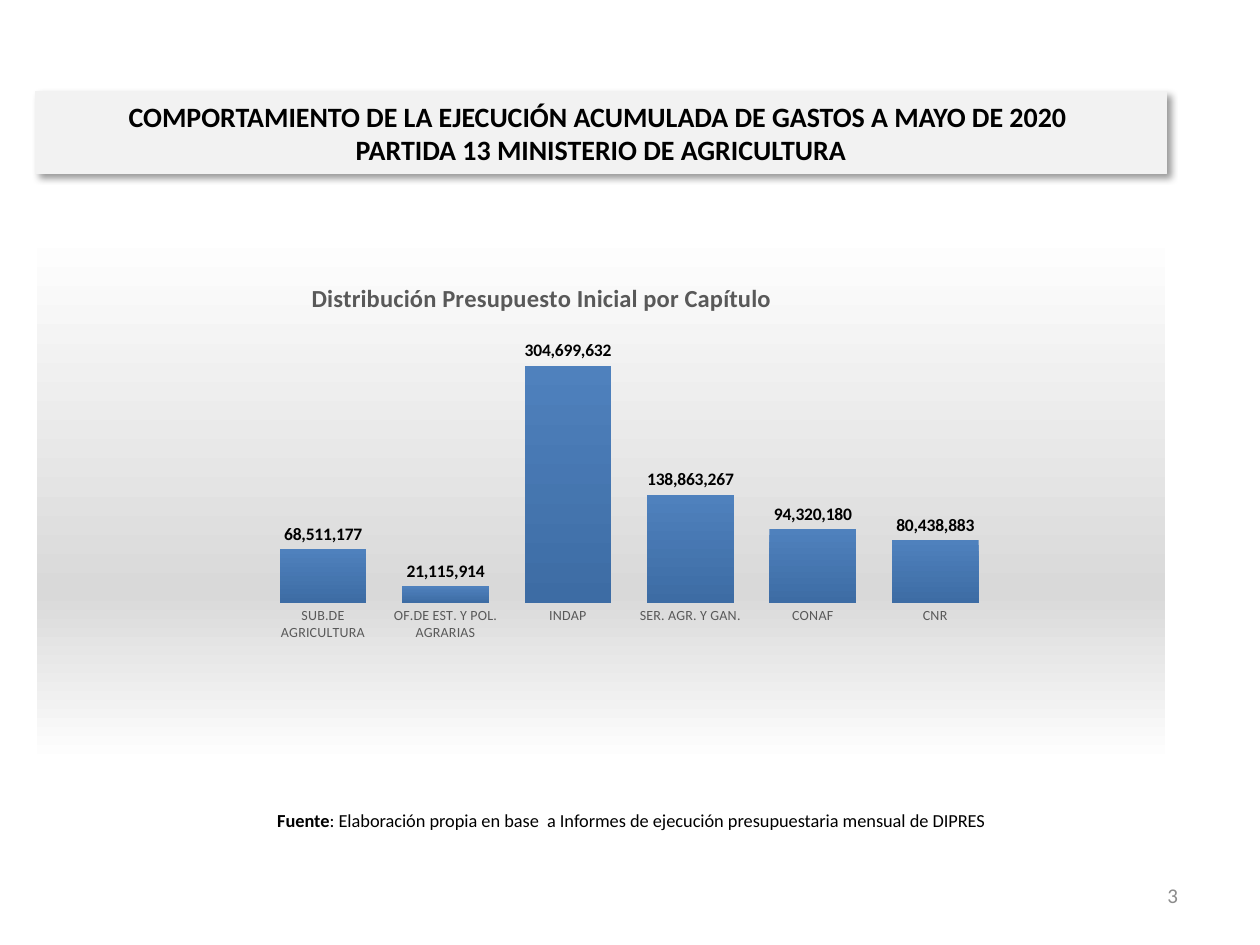
"""Build the slide on the initial budget of the Ministry of Agriculture by chapter."""
from dataclasses import dataclass

from lxml.etree import SubElement
from pptx import Presentation
from pptx.chart.data import CategoryChartData
from pptx.dml.color import RGBColor as Rgb
from pptx.enum.chart import XL_CHART_TYPE as ChartType
from pptx.enum.chart import XL_LABEL_POSITION as LabelPosition
from pptx.enum.chart import XL_TICK_MARK as TickMark
from pptx.enum.shapes import MSO_SHAPE as Preset
from pptx.enum.text import MSO_ANCHOR as Anchor
from pptx.enum.text import PP_ALIGN as Align
from pptx.oxml import parse_xml
from pptx.oxml.ns import nsdecls, qn
from pptx.util import Cm, Pt


@dataclass(frozen=True)
class Theme:
    """Font, colours and type sizes of the slide."""
    font: str = "Calibri"
    ink: str = "000000"
    muted: str = "595959"
    number: str = "8C8C8C"
    band: str = "F2F2F2"
    border: str = "FFFFFF"
    bar: tuple = ("4F81BD", "3D6CA4")
    backdrop: tuple = ((0, "FFFFFF"), (68, "D9D9D9"), (100, "FFFFFF"))
    heading_size: float = 16
    chart_title_size: float = 14
    page_size: float = 12
    source_size: float = 10.5
    label_size: float = 10
    axis_size: float = 8


@dataclass(frozen=True)
class Area:
    """Position and size in centimetres."""
    left: float
    top: float
    width: float
    height: float

    def lengths(self) -> tuple:
        return Cm(self.left), Cm(self.top), Cm(self.width), Cm(self.height)


@dataclass(frozen=True)
class Span:
    """A stretch of text of one weight."""
    text: str
    bold: bool = False


@dataclass(frozen=True)
class Chapter:
    """A budget chapter and its initial amount."""
    name: str
    amount: int


THEME = Theme()
BANNER = Area(0.71, 1.85, 22.81, 1.65)
CHART = Area(0.71, 4.6, 22.81, 10.8)
SOURCE = Area(1.96, 16.03, 21.54, 1.02)
PAGE = Area(18.08, 17.53, 5.92, 1.02)
HEADING = (
    "COMPORTAMIENTO DE LA EJECUCIÓN ACUMULADA DE GASTOS A MAYO DE 2020 ",
    "PARTIDA 13 MINISTERIO DE AGRICULTURA",
)
CHAPTERS = (
    Chapter("SUB.DE AGRICULTURA", 68511177),
    Chapter("OF.DE EST. Y POL. AGRARIAS", 21115914),
    Chapter("INDAP", 304699632),
    Chapter("SER. AGR. Y GAN.", 138863267),
    Chapter("CONAF", 94320180),
    Chapter("CNR", 80438883),
)


def style_font(font, size: float, color: str, bold: bool = False) -> None:
    """Set face, size, colour and weight."""
    font.name, font.size, font.bold = THEME.font, Pt(size), bold
    font.color.rgb = Rgb.from_string(color)


def add_text(page, area: Area, spans: tuple, size: float, color: str, align) -> None:
    """Add a one-paragraph text box."""
    box = page.shapes.add_textbox(*area.lengths())
    frame = box.text_frame
    frame.word_wrap, frame.vertical_anchor = True, Anchor.MIDDLE
    para = frame.paragraphs[0]
    para.alignment = align
    style_font(para.font, size, color)
    for span in spans:
        run = para.add_run()
        run.text, run.font.bold = span.text, span.bold


def add_banner(page) -> None:
    """Add the shaded heading band."""
    box = page.shapes.add_shape(Preset.RECTANGLE, *BANNER.lengths())
    box.fill.solid()
    box.fill.fore_color.rgb = box.line.color.rgb = Rgb.from_string(THEME.band)
    box.line.width = Pt(0.75)
    box.shadow.inherit = False
    effects = box.element.spPr.find(qn("a:effectLst"))
    effects.append(parse_xml(
        f'<a:outerShdw {nsdecls("a")} blurRad="{Pt(4)}" dist="{Pt(3)}" dir="2700000"'
        ' algn="tl" rotWithShape="0"><a:srgbClr val="000000"><a:alpha val="40000"/>'
        '</a:srgbClr></a:outerShdw>'))
    frame = box.text_frame
    frame.word_wrap, frame.vertical_anchor = True, Anchor.MIDDLE
    para = frame.paragraphs[0]
    para.alignment = Align.CENTER
    style_font(para.font, THEME.heading_size, THEME.ink, True)
    para.add_run().text = HEADING[0]
    para.add_line_break()
    para.add_run().text = HEADING[1]


def place(owner, index: int, **settings) -> None:
    """Give a chart part a manual layout."""
    for old in owner.findall(qn("c:layout")):
        owner.remove(old)
    layout = parse_xml(f'<c:layout {nsdecls("c")}/>')
    manual = SubElement(layout, qn("c:manualLayout"))
    for name, value in settings.items():
        SubElement(manual, qn(f"c:{name}")).set("val", str(value))
    owner.insert(index, layout)


def paint_backdrop(space) -> None:
    """Fill the chart area with the vertical gradient."""
    stops = "".join(
        f'<a:gs pos="{position * 1000}"><a:srgbClr val="{color}"/></a:gs>'
        for position, color in THEME.backdrop)
    space.find(qn("c:chart")).addnext(parse_xml(
        f'<c:spPr {nsdecls("c", "a")}><a:gradFill><a:gsLst>{stops}</a:gsLst>'
        f'<a:lin ang="5400000" scaled="0"/></a:gradFill><a:ln w="{Pt(0.75)}">'
        f'<a:solidFill><a:srgbClr val="{THEME.border}"/></a:solidFill></a:ln></c:spPr>'))


def add_budget_chart(page) -> None:
    """Add the column chart of budget by chapter."""
    data = CategoryChartData(number_format="#,##0")
    data.categories = [chapter.name for chapter in CHAPTERS]
    data.add_series("Series 1", [chapter.amount for chapter in CHAPTERS])
    chart = page.shapes.add_chart(
        ChartType.COLUMN_CLUSTERED, *CHART.lengths(), data).chart
    style_font(chart.font, THEME.label_size, THEME.ink)
    chart.has_legend = False
    chart.has_title = True
    title = chart.chart_title.text_frame.paragraphs[0]
    title.text = "Distribución Presupuesto Inicial por Capítulo"
    style_font(title.font, THEME.chart_title_size, THEME.muted, True)

    names, amounts = chart.category_axis, chart.value_axis
    names.major_tick_mark = names.minor_tick_mark = TickMark.NONE
    names.format.line.fill.background()
    style_font(names.tick_labels.font, THEME.axis_size, THEME.muted)
    amounts.visible = amounts.has_major_gridlines = False
    amounts.minimum_scale, amounts.maximum_scale = 0, 350000000

    plot = chart.plots[0]
    plot.gap_width, plot.vary_by_categories = 41, False
    fill = plot.series[0].format.fill
    fill.gradient()
    fill.gradient_angle = 270
    for stop, color, position in zip(fill.gradient_stops, THEME.bar, (0, 1)):
        stop.color.rgb, stop.position = Rgb.from_string(color), position
    labels = plot.series[0].data_labels
    labels.show_value, labels.position = True, LabelPosition.OUTSIDE_END
    labels.number_format, labels.number_format_is_linked = "#,##0", False
    style_font(labels.font, THEME.label_size, THEME.ink, True)

    space = chart.element if hasattr(chart, "element") else chart._chartSpace
    paint_backdrop(space)
    body = space.find(qn("c:chart"))
    place(body.find(qn("c:title")), 1, xMode="edge", yMode="edge", x=0.24, y=0.09)
    place(body.find(qn("c:plotArea")), 0, layoutTarget="inner", xMode="edge",
          yMode="edge", x=0.2, y=0.19, w=0.65, h=0.51)


def main() -> None:
    """Build and save the deck."""
    deck = Presentation()
    deck.slide_width, deck.slide_height = Cm(25.4), Cm(19.05)
    page = deck.slides.add_slide(deck.slide_layouts[6])
    add_text(page, PAGE, (Span("3"),), THEME.page_size, THEME.number, Align.RIGHT)
    add_banner(page)
    source = (Span("Fuente", True), Span(
        ": Elaboración propia en base  a Informes de ejecución presupuestaria mensual de DIPRES"))
    add_text(page, SOURCE, source, THEME.source_size, THEME.ink, Align.CENTER)
    add_budget_chart(page)
    deck.save("out.pptx")


if __name__ == "__main__":
    main()
